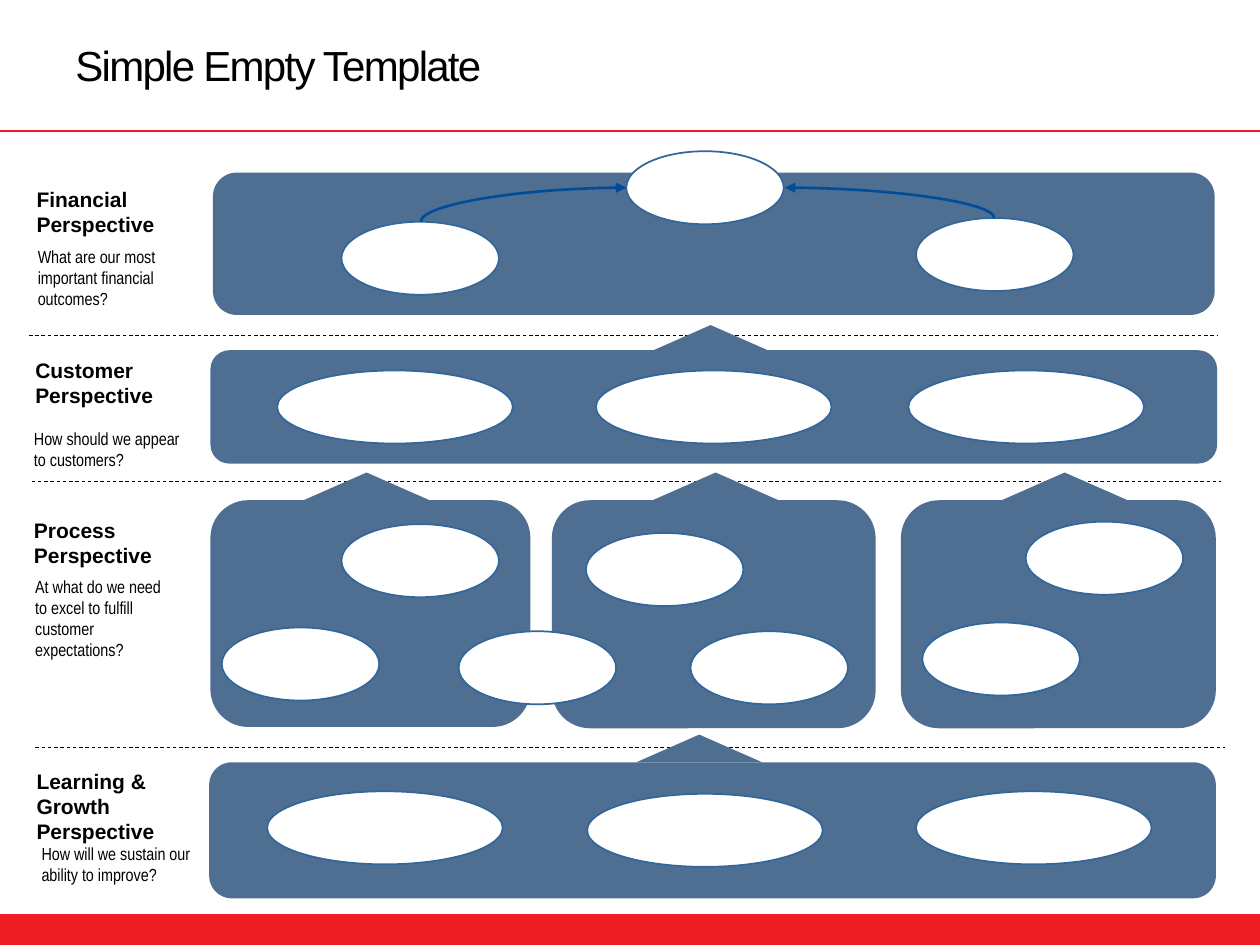
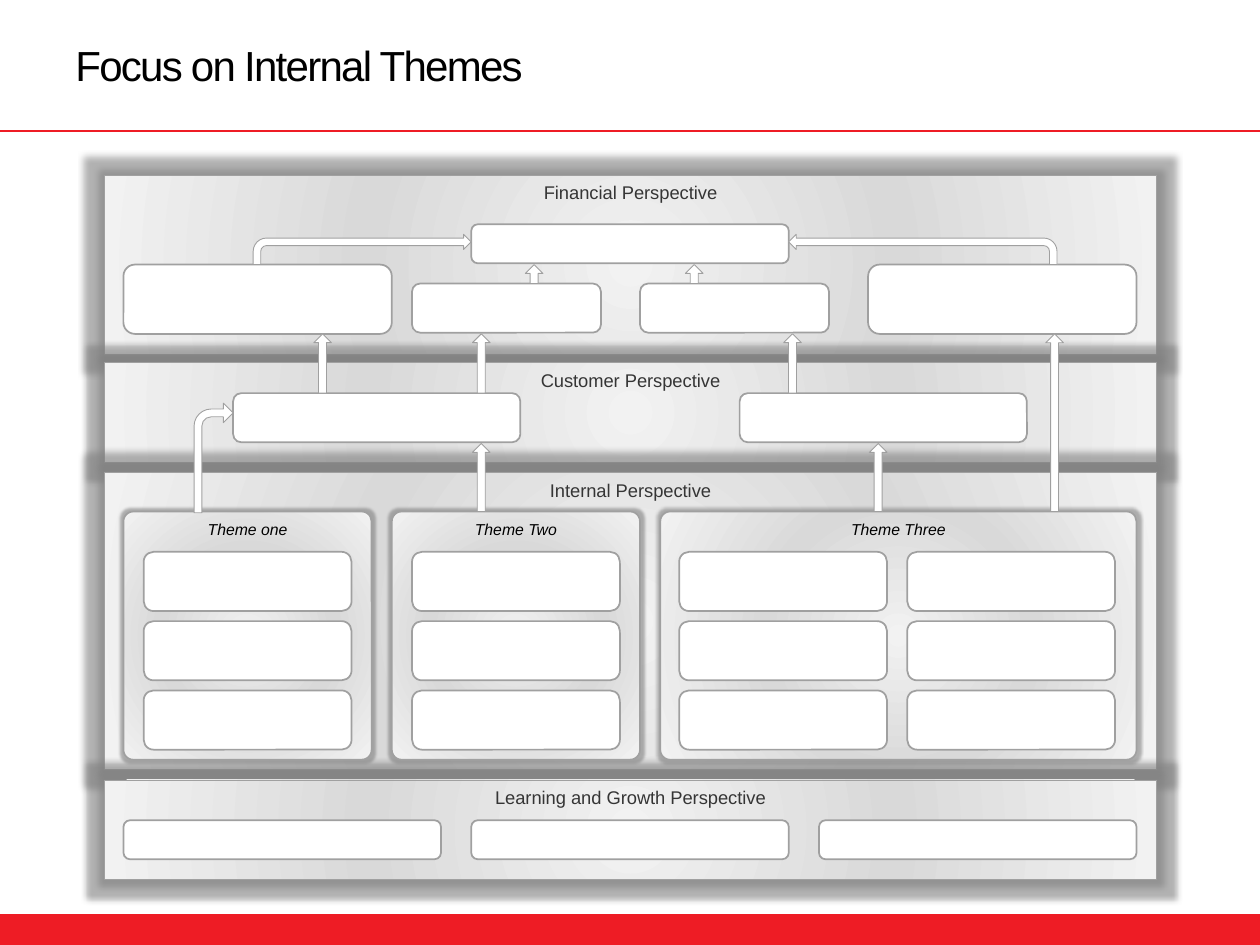
from dataclasses import dataclass
from itertools import product

from lxml import etree
from pptx import Presentation
from pptx.dml.color import RGBColor
from pptx.enum.dml import MSO_LINE
from pptx.enum.shapes import MSO_CONNECTOR, MSO_SHAPE
from pptx.enum.text import MSO_ANCHOR, PP_ALIGN
from pptx.oxml.ns import qn
from pptx.util import Inches, Pt

RECTANGLE = MSO_SHAPE.RECTANGLE
ROUNDED = MSO_SHAPE.ROUNDED_RECTANGLE
OVAL = MSO_SHAPE.OVAL
TRIANGLE = MSO_SHAPE.ISOSCELES_TRIANGLE
UP_ARROW = MSO_SHAPE.UP_ARROW
BENT_ARROW = MSO_SHAPE.BENT_ARROW
STRAIGHT = MSO_CONNECTOR.STRAIGHT
CURVE = MSO_CONNECTOR.CURVE
DASH = MSO_LINE.DASH
TOP, MIDDLE = MSO_ANCHOR.TOP, MSO_ANCHOR.MIDDLE
LEFT, CENTER = PP_ALIGN.LEFT, PP_ALIGN.CENTER

BLACK, WHITE, RED = "000000", "FFFFFF", "EE1C25"
STEEL, OVAL_LINE, CURVE_BLUE = "4F6F92", "336699", "004C99"
GRAY_LINE, GRAY_TEXT, GLOW = "A0A0A0", "353535", "7F7F7F"
GRADIENT = ((0, "F2F2F2"), (50000, "D9D9D9"), (100000, "F2F2F2"))


@dataclass(frozen=True)
class Box:
    left: float
    top: float
    width: float
    height: float

    def lengths(self):
        return [Inches(v) for v in (self.left, self.top, self.width, self.height)]


@dataclass(frozen=True)
class Style:
    size: float
    color: str = BLACK
    font: str = "Arial"
    bold: bool = False
    italic: bool = False
    align: PP_ALIGN = LEFT
    anchor: MSO_ANCHOR = TOP
    inset_x: float = 0.05
    inset_y: float = 0.05
    spacing: int = 0


@dataclass(frozen=True)
class Perspective:
    name: str
    name_box: Box
    question: str
    question_box: Box


@dataclass(frozen=True)
class Panel:
    text: str
    box: Box


TITLE = Style(24, anchor=MIDDLE, inset_x=0.1, inset_y=0, spacing=-100)
NAME = Style(12, bold=True, anchor=MIDDLE)
QUESTION = Style(10, font="Arial Narrow")
PANEL_TEXT = Style(10.5, GRAY_TEXT, align=CENTER, inset_x=0.1)
THEME_TEXT = Style(9, italic=True, align=CENTER, inset_x=0.04, inset_y=0.04)

PERSPECTIVES = (
    Perspective("Financial Perspective", Box(0.24, 1.43, 1.25, 0.5),
                "What are our most important financial outcomes?", Box(0.25, 1.9, 1.43, 0.6)),
    Perspective("Customer Perspective", Box(0.23, 2.79, 1.19, 0.5),
                "How should we appear to customers?", Box(0.22, 3.35, 1.36, 0.43)),
    Perspective("Process Perspective", Box(0.22, 4.06, 1.24, 0.5),
                "At what do we need to excel to fulfill customer expectations?",
                Box(0.23, 4.52, 1.16, 0.77)),
    Perspective("Learning & Growth Perspective", Box(0.24, 6.05, 1.33, 0.7),
                "How will we sustain our ability to improve?", Box(0.28, 6.64, 1.43, 0.43)),
)
DIVIDERS = ((0.23, 2.66), (0.25, 3.82), (0.28, 5.93))
DIVIDER_WIDTH = 9.44
TRIANGLES = ((5.14, 2.58), (2.41, 3.75), (5.18, 3.75), (7.95, 3.75), (5.05, 5.83))
BANDS = (
    Box(1.69, 1.37, 7.95, 1.13), Box(1.67, 2.78, 7.99, 0.9),
    Box(1.67, 3.97, 2.54, 1.8), Box(4.38, 3.97, 2.57, 1.81), Box(7.15, 3.97, 2.5, 1.81),
    Box(1.66, 6.05, 7.99, 1.08),
)
OVAL_HEIGHT = 0.58
OVALS = {
    1.25: ((4.97, 1.2), (2.71, 1.76), (7.27, 1.73),
           (2.71, 4.16), (4.65, 4.23), (8.14, 4.14),
           (1.76, 4.98), (3.64, 5.01), (5.48, 5.01), (7.32, 4.94)),
    1.87: ((2.2, 2.94), (4.73, 2.94), (7.21, 2.94),
           (2.12, 6.28), (4.66, 6.3), (7.27, 6.28)),
}

PANELS = (
    Panel("Financial Perspective", Box(0.83, 1.39, 8.35, 1.42)),
    Panel("Customer Perspective", Box(0.83, 2.88, 8.35, 0.79)),
    Panel("Internal Perspective", Box(0.83, 3.75, 8.35, 2.36)),
    Panel("Learning and Growth Perspective", Box(0.83, 6.19, 8.35, 0.79)),
)
THEMES = (
    Panel("Theme one", Box(0.98, 4.06, 1.97, 1.97)),
    Panel("Theme Two", Box(3.11, 4.06, 1.97, 1.97)),
    Panel("Theme Three", Box(5.24, 4.06, 3.78, 1.97)),
)
OBJECTIVES = (
    Box(3.74, 1.78, 2.52, 0.31),
    *(Box(left, 2.1, 2.13, 0.55) for left in (0.98, 6.89)),
    *(Box(left, 2.25, 1.5, 0.39) for left in (3.27, 5.08)),
    *(Box(left, 3.12, 2.28, 0.39) for left in (1.85, 5.87)),
    *(Box(left, 4.38 + 0.55 * row, 1.65, 0.47)
      for row, left in product(range(3), (1.14, 3.27, 5.39, 7.2))),
    *(Box(0.98 + 2.76 * column, 6.51, 2.52, 0.31) for column in range(3)),
)
UP_ARROWS = (
    (4.17, 2.1, 0.15), (5.44, 2.1, 0.15),
    (2.49, 2.65, 0.47), (3.75, 2.65, 0.47), (6.22, 2.65, 0.47), (8.3, 2.65, 1.41),
    (3.75, 3.52, 0.54), (6.9, 3.52, 0.54),
)


def rgb(value: str) -> RGBColor:
    return RGBColor.from_string(value)


def add_text(shape, text: str, style: Style) -> None:
    frame = shape.text_frame
    frame.word_wrap = True
    frame.vertical_anchor = style.anchor
    frame.margin_left = frame.margin_right = Inches(style.inset_x)
    frame.margin_top = frame.margin_bottom = Inches(style.inset_y)
    paragraph = frame.paragraphs[0]
    paragraph.alignment = style.align
    run = paragraph.add_run()
    run.text = text
    run.font.size = Pt(style.size)
    run.font.name = style.font
    run.font.bold = style.bold
    run.font.italic = style.italic
    run.font.color.rgb = rgb(style.color)
    if style.spacing:
        run.font._element.set("spc", str(style.spacing))


def add_text_box(slide, box: Box, text: str, style: Style) -> None:
    add_text(slide.shapes.add_textbox(*box.lengths()), text, style)


def add_shape(slide, kind, box: Box, fill: str, line: str = "", width: float = 1,
              adjustments: tuple = ()):
    shape = slide.shapes.add_shape(kind, *box.lengths())
    shape.shadow.inherit = False
    shape.fill.solid()
    shape.fill.fore_color.rgb = rgb(fill)
    if line:
        shape.line.color.rgb = rgb(line)
        shape.line.width = Pt(width)
    else:
        shape.line.fill.background()
    for index, value in enumerate(adjustments):
        shape.adjustments[index] = value
    return shape


def add_connector(slide, kind, start: tuple, end: tuple, color: str, width: float):
    connector = slide.shapes.add_connector(kind, *(Inches(v) for v in (*start, *end)))
    connector.line.color.rgb = rgb(color)
    connector.line.width = Pt(width)
    etree.SubElement(connector._element.spPr, qn("a:effectLst"))
    return connector


def add_curved_arrow(slide, start: tuple, end: tuple) -> None:
    middle_x, middle_y = (start[0] + end[0]) / 2, (start[1] + end[1]) / 2
    half_width, half_height = abs(start[1] - end[1]) / 2, abs(start[0] - end[0]) / 2
    side = 1 if end[0] > start[0] else -1
    connector = add_connector(
        slide, CURVE,
        (middle_x + side * half_width, middle_y + half_height),
        (middle_x - side * half_width, middle_y - half_height), CURVE_BLUE, 1.5)
    properties = connector._element.spPr
    properties.find(qn("a:xfrm")).set("rot", str((90 if side > 0 else 270) * 60000))
    properties.find(qn("a:prstGeom")).set("prst", "curvedConnector2")
    etree.SubElement(properties.find(qn("a:ln")), qn("a:tailEnd"), type="triangle")


def add_gradient(shape) -> None:
    shape.fill.gradient()
    gradient = shape._element.spPr.find(qn("a:gradFill"))
    for child in list(gradient):
        gradient.remove(child)
    stops = etree.SubElement(gradient, qn("a:gsLst"))
    for position, color in GRADIENT:
        stop = etree.SubElement(stops, qn("a:gs"), pos=str(position))
        etree.SubElement(stop, qn("a:srgbClr"), val=color)
    circle = etree.SubElement(gradient, qn("a:path"), path="circle")
    etree.SubElement(circle, qn("a:fillToRect"), l="50000", t="50000", r="50000", b="50000")


def add_glow(shape, radius: float) -> None:
    effects = shape._element.spPr.find(qn("a:effectLst"))
    glow = etree.SubElement(effects, qn("a:glow"), rad=str(Inches(radius)))
    color = etree.SubElement(glow, qn("a:srgbClr"), val=GLOW)
    etree.SubElement(color, qn("a:alpha"), val="60000")


def add_panel(slide, kind, panel: Panel, style: Style, line_width: float, radius: float,
              adjustments: tuple = ()) -> None:
    shape = add_shape(slide, kind, panel.box, WHITE, GRAY_LINE, line_width, adjustments)
    add_gradient(shape)
    add_glow(shape, radius)
    add_text(shape, panel.text, style)


def add_titled_slide(presentation, title: str):
    slide = presentation.slides.add_slide(presentation.slide_layouts[6])
    add_shape(slide, RECTANGLE, Box(0, 7.27, 10, 0.24), RED, RED, 2.08)
    add_connector(slide, STRAIGHT, (0, 1.04), (10, 1.04), RED, 1.5)
    add_text_box(slide, Box(0.5, 0.15, 7.29, 0.72), title, TITLE)
    return slide


def build_empty_template(presentation) -> None:
    slide = add_titled_slide(presentation, "Simple Empty Template")
    for left, top in DIVIDERS:
        divider = add_connector(slide, STRAIGHT, (left, top), (left + DIVIDER_WIDTH, top),
                                BLACK, 0.5)
        divider.line.dash_style = DASH
    for left, top in TRIANGLES:
        add_shape(slide, TRIANGLE, Box(left, top, 1, 0.22), STEEL)
    for band in BANDS:
        add_shape(slide, ROUNDED, band, STEEL)
    for perspective in PERSPECTIVES:
        label = add_shape(slide, RECTANGLE, perspective.name_box, WHITE)
        add_text(label, perspective.name, NAME)
        add_text_box(slide, perspective.question_box, perspective.question, QUESTION)
    for width, places in OVALS.items():
        for left, top in places:
            add_shape(slide, OVAL, Box(left, top, width, OVAL_HEIGHT), WHITE, OVAL_LINE)
    add_curved_arrow(slide, (3.34, 1.76), (4.97, 1.49))
    add_curved_arrow(slide, (7.89, 1.73), (6.23, 1.49))


def build_internal_themes(presentation) -> None:
    slide = add_titled_slide(presentation, "Focus on Internal Themes")
    for panel in PANELS:
        add_panel(slide, RECTANGLE, panel, PANEL_TEXT, 0.5, 0.1)
    for theme in THEMES:
        add_panel(slide, ROUNDED, theme, THEME_TEXT, 1, 0.05, (0.04,))
    for objective in OBJECTIVES:
        add_shape(slide, ROUNDED, objective, WHITE, GRAY_LINE)
    add_shape(slide, BENT_ARROW, Box(2.01, 1.86, 1.73, 0.24), WHITE, GRAY_LINE, 0.5)
    mirrored = add_shape(slide, BENT_ARROW, Box(6.26, 1.86, 2.13, 0.24), WHITE, GRAY_LINE, 0.5)
    mirrored._element.spPr.find(qn("a:xfrm")).set("flipH", "1")
    add_shape(slide, BENT_ARROW, Box(1.54, 3.2, 0.31, 0.87), WHITE, GRAY_LINE, 0.5,
              (0.2, 0.25, 0.25, 0.44))
    for left, top, height in UP_ARROWS:
        add_shape(slide, UP_ARROW, Box(left, top, 0.14, height), WHITE, GRAY_LINE, 0.5,
                  (0.45, 0.5))


def main() -> None:
    presentation = Presentation()
    presentation.slide_width = Inches(10)
    presentation.slide_height = Inches(7.5)
    build_empty_template(presentation)
    build_internal_themes(presentation)
    presentation.save("out.pptx")


if __name__ == "__main__":
    main()
